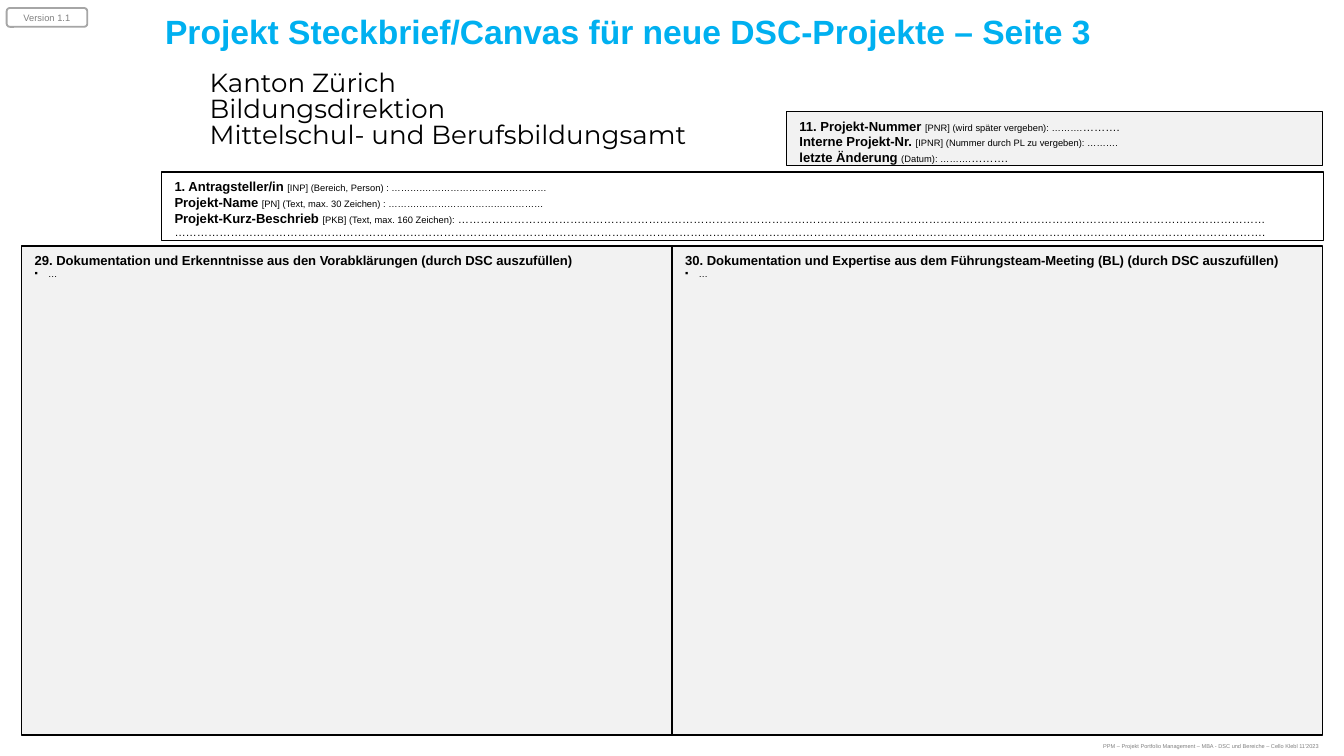
from copy import deepcopy
from dataclasses import dataclass
from typing import Optional

from lxml.etree import SubElement
from pptx import Presentation
from pptx.dml.color import RGBColor
from pptx.enum.shapes import MSO_SHAPE
from pptx.enum.text import MSO_ANCHOR, PP_ALIGN
from pptx.oxml.ns import qn
from pptx.util import Inches, Pt

COLORS = {
    "black": "000000",
    "panel": "F2F2F2",
    "title": "00B0F0",
    "border": "A6A6A6",
    "muted": "808080",
}


@dataclass
class Run:
    text: str
    size: float
    bold: bool = False
    color: str = "black"
    font: str = "Arial"
    tight: bool = True


@dataclass
class Para:
    runs: list[Run]
    align: PP_ALIGN = PP_ALIGN.LEFT
    bullet: bool = False
    spacing: Optional[float] = None


@dataclass
class Box:
    left: float
    top: float
    width: float
    height: float
    paras: list[Para]
    shape: Optional[MSO_SHAPE] = None
    fill: Optional[str] = None
    line: str = "black"
    weight: float = 0.75
    anchor: MSO_ANCHOR = MSO_ANCHOR.TOP
    inset: bool = True


def rgb(name: str) -> RGBColor:
    return RGBColor.from_string(COLORS[name])


def add_run(para, item: Run) -> None:
    """Write a run; tight line breaks take the size of its text."""
    for n, part in enumerate(item.text.split("\n")):
        if n:
            para.add_line_break()
            if item.tight:
                mark = para._p.findall(qn("a:br"))[-1]
                mark.append(deepcopy(run._r.rPr))
        run = para.add_run()
        run.text = part
        run.font.size = Pt(item.size)
        run.font.bold = item.bold
        run.font.name = item.font
        run.font.color.rgb = rgb(item.color)


def add_bullet(para) -> None:
    props = para._p.get_or_add_pPr()
    props.set("marL", str(Inches(0.1)))
    props.set("indent", str(Inches(-0.1)))
    SubElement(props, qn("a:buFont"), typeface="Arial")
    SubElement(props, qn("a:buChar"), char="▪")


def draw(slide, box: Box) -> None:
    place = [Inches(v) for v in (box.left, box.top, box.width, box.height)]
    if box.shape is None:
        shape = slide.shapes.add_textbox(*place)
    else:
        shape = slide.shapes.add_shape(box.shape, *place)
        shape.shadow.inherit = False
        if box.fill:
            shape.fill.solid()
            shape.fill.fore_color.rgb = rgb(box.fill)
        else:
            shape.fill.background()
        shape.line.color.rgb = rgb(box.line)
        shape.line.width = Pt(box.weight)
    frame = shape.text_frame
    frame.word_wrap = True
    frame.vertical_anchor = box.anchor
    if not box.inset:
        frame.margin_left = frame.margin_right = 0
        frame.margin_top = frame.margin_bottom = 0
    for n, item in enumerate(box.paras):
        para = frame.add_paragraph() if n else frame.paragraphs[0]
        if item.bullet:
            add_bullet(para)
        para.alignment = item.align
        if item.spacing:
            para.line_spacing = item.spacing
        for run in item.runs:
            add_run(para, run)


def field(label: str, hint: str, dots: str = "") -> Para:
    """Bold label, small hint and an optional dotted line to fill in."""
    runs = [Run(label, 7, True), Run(hint, 5)]
    return Para(runs + [Run(dots, 6)] if dots else runs)


def panel(left: float, title: str) -> Box:
    paras = [Para([Run(title, 7, True)]), Para([Run("…", 5)], bullet=True)]
    return Box(left, 1.83, 4.84, 3.64, paras, MSO_SHAPE.RECTANGLE, "panel")


DOTS = "……….…………………….……………"
SHORT = "………."

BOXES = [
    # Office name
    Box(1.56, 0.53, 6.94, 0.4, [Para([Run(
        "Kanton Zürich\nBildungsdirektion\nMittelschul- und Berufsbildungsamt",
        14, font="Montserrat", tight=False)], spacing=0.84)], inset=False),
    # Two large panels
    panel(5, "30. Dokumentation und Expertise aus dem Führungsteam-Meeting (BL) "
             "(durch DSC auszufüllen)"),
    panel(0.16, "29. Dokumentation und Erkenntnisse aus den Vorabklärungen "
                "(durch DSC auszufüllen)"),
    # Applicant and project
    Box(1.2, 1.28, 8.65, 0.51, [
        field("1. Antragsteller/in ", "[INP] (Bereich, Person) : " + DOTS),
        field("Projekt-Name ", "[PN] (Text, max. 30 Zeichen) : " + DOTS),
        field("Projekt-Kurz-Beschrieb ", "[PKB] (Text, max. 160 Zeichen): ",
              "…" * 72 + "\n" + "…" * 97 + "."),
    ], MSO_SHAPE.RECTANGLE),
    # Title
    Box(1.13, 0.03, 7.72, 0.4, [Para([Run(
        "Projekt Steckbrief/Canvas für neue DSC-Projekte – Seite 3",
        18, True, "title")])]),
    # Version tag
    Box(0.05, 0.06, 0.6, 0.14,
        [Para([Run("Version 1.1", 5, color="muted")], PP_ALIGN.CENTER)],
        MSO_SHAPE.ROUNDED_RECTANGLE, line="border", weight=1,
        anchor=MSO_ANCHOR.MIDDLE),
    # Footer
    Box(7.95, 5.48, 1.96, 0.15, [Para([Run(
        "PPM – Projekt Portfolio Management – MBA - DSC und Bereiche – "
        "Cello Klebl 11'2023", 3, color="muted")], PP_ALIGN.RIGHT)]),
    # Project numbers
    Box(5.85, 0.83, 3.99, 0.4, [
        field("11. Projekt-Nummer ", "[PNR] (wird später vergeben): " + SHORT, SHORT),
        field("Interne Projekt-Nr. ", "[IPNR] (Nummer durch PL zu vergeben): " + SHORT),
        field("letzte Änderung ", "(Datum): " + SHORT, SHORT),
    ], MSO_SHAPE.RECTANGLE, "panel"),
]


def main() -> None:
    deck = Presentation()
    # Widescreen, 16 to 9
    deck.slide_width = Inches(10)
    deck.slide_height = Inches(10 * 9 / 16)
    slide = deck.slides.add_slide(deck.slide_layouts[6])
    for box in BOXES:
        draw(slide, box)
    deck.save("out.pptx")


if __name__ == "__main__":
    main()
